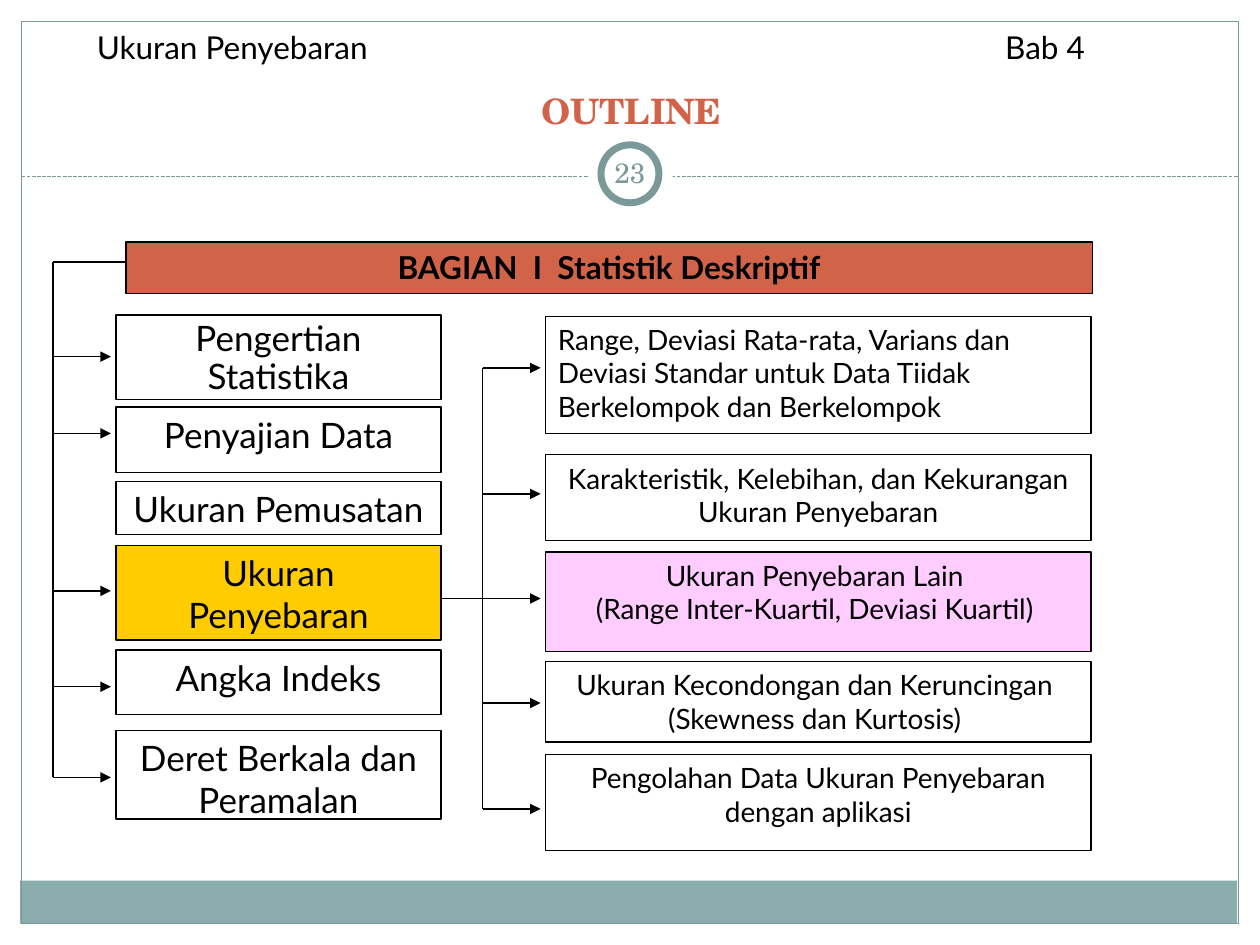
"""Build the course outline slide on measures of dispersion."""
import pptx
import pptx.dml.color
import pptx.enum.dml
import pptx.enum.shapes
import pptx.enum.text
import pptx.oxml
import pptx.util
from lxml import etree
from pptx.oxml.ns import qn

Inches = pptx.util.Inches
Pt = pptx.util.Pt
SHAPE = pptx.enum.shapes.MSO_SHAPE
ALIGN = pptx.enum.text.PP_ALIGN
ANCHOR = pptx.enum.text.MSO_ANCHOR

COLORS = {
    "white": "FFFFFF", "black": "000000", "band": "8CADAE", "frame": "7C999A",
    "accent": "D16349", "current": "FFCC00", "topic": "FFCCFF",
}
BODY_FONT = "Lato"
TITLE_FONT = "TeX Gyre Schola"

HEADER = "Ukuran Penyebaran\tBab 4"
HEADER_TAB = 7.21
TITLE = "OUTLINE"
PAGE_NUMBER = "23"
PART = "BAGIAN  I  Statistik Deskriptif"

CHAPTERS = [
    (2.5, 0.67, "white", ["Pengertian Statistika"]),
    (3.23, 0.52, "white", ["Penyajian Data"]),
    (3.82, 0.42, "white", ["Ukuran Pemusatan"]),
    (4.33, 0.75, "current", ["Ukuran Penyebaran"]),
    (5.16, 0.51, "white", ["Angka Indeks"]),
    (5.8, 0.7, "white", ["Deret Berkala dan", "Peramalan"]),
]
TOPICS = [
    (2.51, 0.93, "white", ["Range, Deviasi Rata-rata, Varians dan Deviasi Standar "
                           "untuk Data Tiidak Berkelompok dan Berkelompok"]),
    (3.61, 0.68, "white", ["Karakteristik, Kelebihan, dan Kekurangan Ukuran Penyebaran"]),
    (4.38, 0.79, "topic", ["Ukuran Penyebaran Lain ",
                           "(Range Inter-Kuartil, Deviasi Kuartil) "]),
    (5.25, 0.64, "white", ["Ukuran Kecondongan dan Keruncingan ",
                           "(Skewness dan Kurtosis) "]),
    (5.99, 0.76, "white", ["Pengolahan Data Ukuran Penyebaran dengan aplikasi"]),
]
CHAPTER_LEFT, CHAPTER_WIDTH = 0.92, 2.58
TOPIC_LEFT, TOPIC_WIDTH = 4.33, 4.33
CHAPTER_SPINE, TOPIC_SPINE = 0.42, 3.83
CHAPTER_ARROWS = [2.83, 3.44, 4.69, 5.45, 6.17]
TOPIC_ARROWS = [2.92, 3.92, 5.58, 6.42]
PART_LEFT, PART_LINE = 1, 2.08
CURRENT_LINE = 4.75
ARROW_GAP = 0.04


def color(name):
    return pptx.dml.color.RGBColor.from_string(COLORS[name])


def add_box(page, place, fill=None, line=None, width=0.75, kind=SHAPE.RECTANGLE):
    box = page.shapes.add_shape(kind, *map(Inches, place))
    box.shadow.inherit = False
    if fill:
        box.fill.solid()
        box.fill.fore_color.rgb = color(fill)
    else:
        box.fill.background()
    if line:
        box.line.color.rgb = color(line)
        box.line.width = Pt(width)
    else:
        box.line.fill.background()
    return box


def write(box, lines, size, ink="black", font=BODY_FONT, bold=False,
          align=ALIGN.CENTER, anchor=ANCHOR.TOP):
    frame = box.text_frame
    frame.word_wrap = True
    frame.vertical_anchor = anchor
    frame.text = "\n".join(lines)
    for paragraph in frame.paragraphs:
        paragraph.alignment = align
        paragraph.font.size = Pt(size)
        paragraph.font.name = font
        paragraph.font.bold = bold
        paragraph.font.color.rgb = color(ink)
    return frame


def add_text(page, place, text, size, **style):
    return write(page.shapes.add_textbox(*map(Inches, place)), [text], size, **style)


def add_line(page, start, end, arrow=False, ink="black"):
    line = page.shapes.add_connector(
        pptx.enum.shapes.MSO_CONNECTOR.STRAIGHT, *map(Inches, start + end))
    line.line.color.rgb = color(ink)
    line.line.width = Pt(0.75)
    if arrow:
        etree.SubElement(line.line._get_or_add_ln(), qn("a:tailEnd"), type="triangle")
    etree.SubElement(line._element.spPr, qn("a:effectLst"))
    return line


def add_column(page, rows, left, width, size):
    boxes = []
    for top, height, fill, lines in rows:
        box = add_box(page, (left, top, width, height), fill, "black")
        write(box, lines, size)
        boxes.append(box)
    return boxes


def add_arrows(page, spine, target, heights):
    for height in heights:
        add_line(page, (spine, height), (target - ARROW_GAP, height), arrow=True)


def add_background(page):
    add_box(page, (0.16, 6.99, 9.66, 0.34), "band")
    add_box(page, (0.17, 0.17, 9.66, 7.16), line="frame")
    rule = add_line(page, (0.17, 1.4), (9.83, 1.4), ink="frame")
    rule.line.dash_style = pptx.enum.dml.MSO_LINE.SQUARE_DOT
    add_box(page, (4.67, 1.05, 0.67, 0.67), "white", kind=SHAPE.OVAL)
    add_box(page, (4.77, 1.15, 0.46, 0.46), "white", "frame", 4, SHAPE.OVAL)
    number = add_text(page, (4.75, 1.13, 0.5, 0.48), PAGE_NUMBER, 16, ink="frame",
                      font=TITLE_FONT, anchor=ANCHOR.MIDDLE)
    number.margin_left = number.margin_right = Inches(0.05)


def add_header(page):
    add_text(page, (0.75, 0.5, 8.52, 0.59), TITLE, 20, ink="accent",
             font=TITLE_FONT, bold=True, anchor=ANCHOR.BOTTOM)
    frame = add_text(page, (0.67, 0.17, 8.33, 0.4), HEADER, 18, align=ALIGN.LEFT)
    tabs = pptx.oxml.parse_xml(
        '<a:tabLst xmlns:a="http://schemas.openxmlformats.org/drawingml/2006/main">'
        f'<a:tab pos="{Inches(HEADER_TAB)}" algn="l"/></a:tabLst>')
    frame.paragraphs[0]._p.get_or_add_pPr().insert(0, tabs)


def add_outline(page):
    part = add_box(page, (PART_LEFT, 1.92, 7.67, 0.41), "accent", "black")
    write(part, [PART], 18, bold=True)
    chapters = add_column(page, CHAPTERS, CHAPTER_LEFT, CHAPTER_WIDTH, 20)
    chapters[0].text_frame.paragraphs[0].line_spacing = 0.9
    topics = add_column(page, TOPICS, TOPIC_LEFT, TOPIC_WIDTH, 16)
    topics[0].text_frame.paragraphs[0].alignment = ALIGN.LEFT

    add_line(page, (CHAPTER_SPINE, PART_LINE), (PART_LEFT, PART_LINE))
    add_line(page, (CHAPTER_SPINE, PART_LINE), (CHAPTER_SPINE, CHAPTER_ARROWS[-1]))
    add_arrows(page, CHAPTER_SPINE, CHAPTER_LEFT, CHAPTER_ARROWS)
    add_line(page, (TOPIC_SPINE, TOPIC_ARROWS[0]), (TOPIC_SPINE, TOPIC_ARROWS[-1]))
    add_arrows(page, TOPIC_SPINE, TOPIC_LEFT, TOPIC_ARROWS)
    add_arrows(page, CHAPTER_LEFT + CHAPTER_WIDTH, TOPIC_LEFT, [CURRENT_LINE])


def main():
    deck = pptx.Presentation()
    deck.slide_width, deck.slide_height = Inches(10), Inches(7.5)
    page = deck.slides.add_slide(deck.slide_layouts[6])
    add_background(page)
    add_header(page)
    add_outline(page)
    deck.save("out.pptx")


if __name__ == "__main__":
    main()
